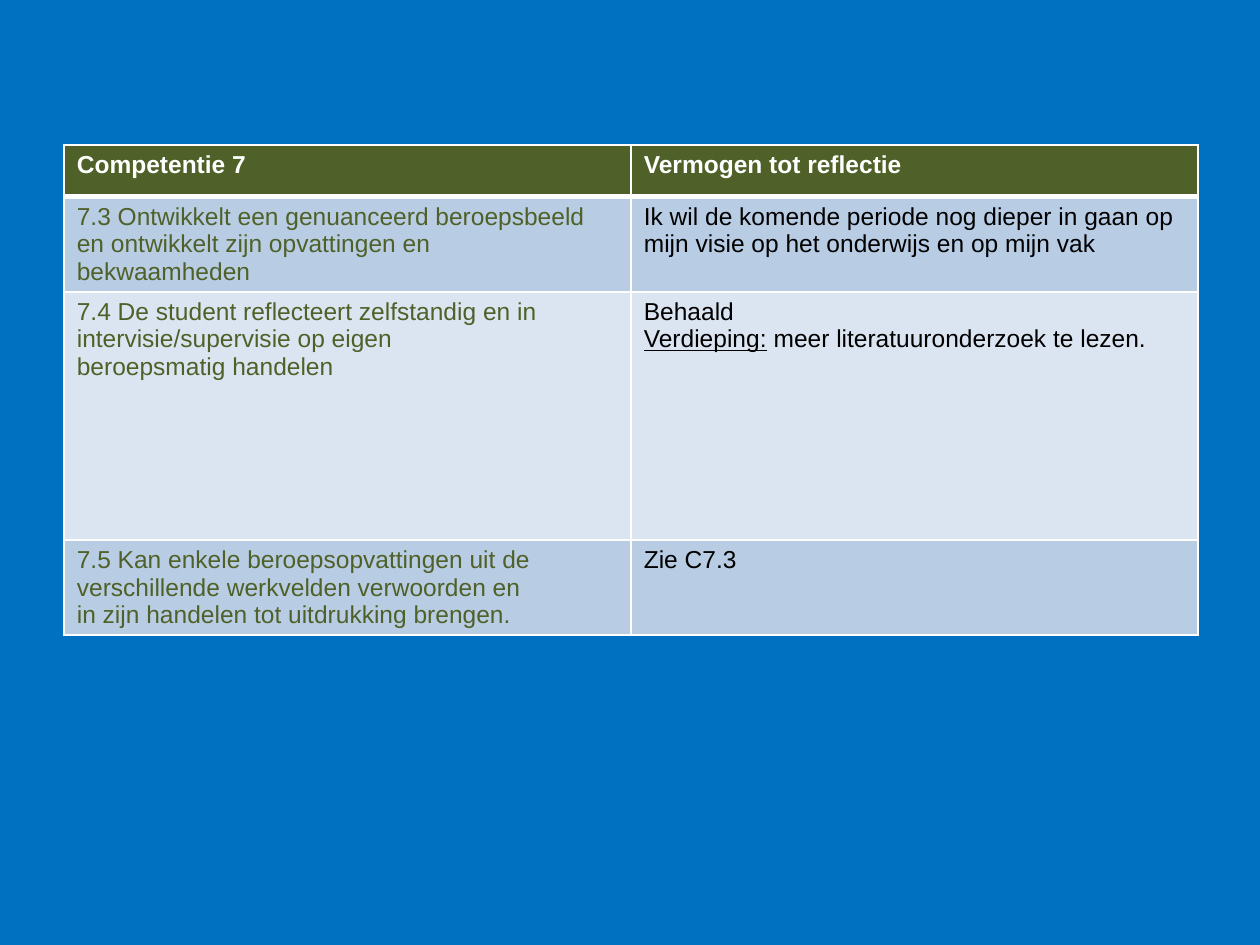
from lxml.etree import SubElement
from pptx import Presentation
from pptx.dml.color import RGBColor
from pptx.oxml.ns import qn
from pptx.util import Inches, Pt

BLUE = RGBColor(0x00, 0x70, 0xC0)
OLIVE = RGBColor(0x4F, 0x61, 0x28)
MID = RGBColor(0xB8, 0xCC, 0xE4)
PALE = RGBColor(0xDB, 0xE5, 0xF1)
WHITE = RGBColor(0xFF, 0xFF, 0xFF)
BLACK = RGBColor(0x00, 0x00, 0x00)

HEIGHTS = [0.41, 0.41, 1.97, 0.41]
LABEL = "Verdieping:"
ROWS = [
    ("Competentie 7", "Vermogen tot reflectie"),
    ("7.3 Ontwikkelt een genuanceerd beroepsbeeld en ontwikkelt zijn "
     "opvattingen en\nbekwaamheden",
     "Ik wil de komende periode nog dieper in gaan op mijn visie op het "
     "onderwijs en op mijn vak"),
    ("7.4 De student reflecteert zelfstandig en in intervisie/supervisie "
     "op eigen\nberoepsmatig handelen",
     f"Behaald\n{LABEL} meer literatuuronderzoek te lezen."),
    ("7.5 Kan enkele beroepsopvattingen uit de verschillende werkvelden "
     "verwoorden en\nin zijn handelen tot uitdrukking brengen.",
     "Zie C7.3"),
]


def set_edges(cell, top, bottom):
    """Draw white cell borders; top and bottom are widths in points."""
    props = cell._tc.get_or_add_tcPr()
    for side, width in (("L", 1), ("R", 1), ("T", top), ("B", bottom)):
        line = SubElement(props, qn(f"a:ln{side}"), w=str(Pt(width)))
        fill = SubElement(line, qn("a:solidFill"))
        SubElement(fill, qn("a:srgbClr"), val=str(WHITE))


def write_line(para, text, color, bold):
    """Fill one paragraph, underlining the label if it leads the text."""
    if text.startswith(LABEL):
        para.add_run().text = LABEL
        para.runs[0].font.underline = True
        text = text.removeprefix(LABEL)
    para.add_run().text = text
    font = para.font
    font.name, font.size, font.bold = "Arial", Pt(14), bold
    font.color.rgb = color
    for run in para.runs:
        run.font.bold = bold
        run.font.color.rgb = color


def fill_cell(cell, text, row, col):
    head = row == 0
    set_edges(cell, 3 if row == 1 else 1, 3 if head else 1)
    cell.fill.solid()
    cell.fill.fore_color.rgb = OLIVE if head else MID if row % 2 else PALE
    color = WHITE if head else BLACK if col else OLIVE
    frame = cell.text_frame
    for i, line in enumerate(text.split("\n")):
        para = frame.add_paragraph() if i else frame.paragraphs[0]
        write_line(para, line, color, head)


def add_grid(slide):
    table = slide.shapes.add_table(
        len(ROWS), 2, Inches(0.51), Inches(1.15),
        Inches(9), Inches(sum(HEIGHTS))).table
    for r, (height, texts) in enumerate(zip(HEIGHTS, ROWS)):
        table.rows[r].height = Inches(height)
        for c, text in enumerate(texts):
            fill_cell(table.cell(r, c), text, r, c)


def main():
    deck = Presentation()
    deck.slide_width, deck.slide_height = Inches(10), Inches(7.5)
    slide = deck.slides.add_slide(deck.slide_layouts[6])
    slide.background.fill.solid()
    slide.background.fill.fore_color.rgb = BLUE
    add_grid(slide)
    deck.save("out.pptx")


if __name__ == "__main__":
    main()
